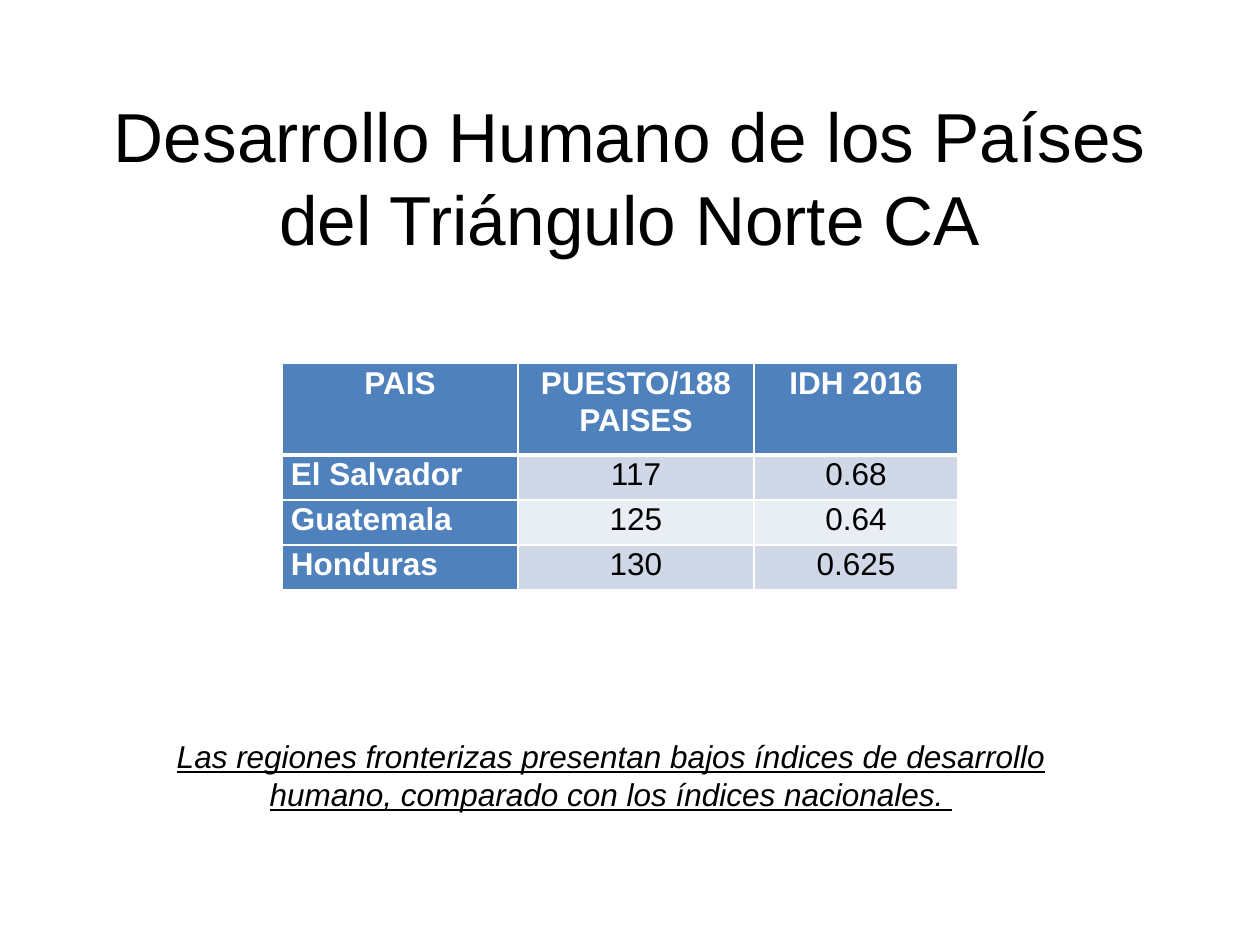
import pptx
import pptx.util
import pptx.dml.color
import pptx.enum.text
import pptx.oxml
import pptx.oxml.ns

TITLE = "Desarrollo Humano de los Países del Triángulo Norte CA"
NOTE = ("Las regiones fronterizas presentan bajos índices de desarrollo humano, "
        "comparado con los índices nacionales. ")
ROWS = [
    ("PAIS", "PUESTO/188 PAISES", "IDH 2016"),
    ("El Salvador", "117", "0.68"),
    ("Guatemala", "125", "0.64"),
    ("Honduras", "130", "0.625"),
]
COLUMN_WIDTHS = (236, 236, 204)
ROW_HEIGHTS = (92, 45, 45, 45)
BLACK, WHITE, BLUE = "000000", "FFFFFF", "4F81BD"
BANDS = ("E9EDF4", "D0D8E8")
ALIGN = pptx.enum.text.PP_ALIGN


def px(count):
    return pptx.util.Emu(round(count * 914400 / 126))


def rgb(value):
    return pptx.dml.color.RGBColor.from_string(value)


def write(frame, text, size, color=BLACK, bold=False, align=ALIGN.CENTER):
    frame.word_wrap = True
    paragraph = frame.paragraphs[0]
    paragraph.text = text
    paragraph.alignment = align
    paragraph.font.name = "Arial"
    paragraph.font.size = pptx.util.Pt(size)
    paragraph.font.bold = bold
    paragraph.font.color.rgb = rgb(color)
    return paragraph


def add_text(slide, box, text, size):
    frame = slide.shapes.add_textbox(*map(px, box)).text_frame
    return frame, write(frame, text, size)


def set_borders(cell, bottom):
    properties = cell._tc.get_or_add_tcPr()
    sides = (("lnL", 1), ("lnR", 1), ("lnT", 1), ("lnB", bottom))
    for index, (side, points) in enumerate(sides):
        properties.insert(index, pptx.oxml.parse_xml(
            f'<a:{side} {pptx.oxml.ns.nsdecls("a")} w="{pptx.util.Pt(points)}">'
            f'<a:solidFill><a:srgbClr val="{WHITE}"/></a:solidFill></a:{side}>'))


def fill_cell(cell, text, row, column):
    heading = row == 0 or column == 0
    cell.margin_left = cell.margin_right = px(9)
    cell.margin_top = cell.margin_bottom = 0
    cell.fill.solid()
    cell.fill.fore_color.rgb = rgb(BLUE if heading else BANDS[row % 2])
    paragraph = write(cell.text_frame, text, 18, WHITE if heading else BLACK, heading,
                      ALIGN.JUSTIFY if row and column == 0 else ALIGN.CENTER)
    paragraph.line_spacing = 1.07
    paragraph.space_after = pptx.util.Pt(8)
    set_borders(cell, 1 if row else 3)


def main():
    deck = pptx.Presentation()
    deck.slide_width, deck.slide_height = px(1260), px(945)
    slide = deck.slides.add_slide(deck.slide_layouts[6])

    title_frame, _ = add_text(slide, (63, 97, 1134, 158), TITLE, 39.6)
    title_frame.vertical_anchor = pptx.enum.text.MSO_ANCHOR.MIDDLE

    ranking = slide.shapes.add_table(
        len(ROWS), len(COLUMN_WIDTHS), px(282), px(363),
        px(sum(COLUMN_WIDTHS)), px(sum(ROW_HEIGHTS))).table
    for column, width in zip(ranking.columns, COLUMN_WIDTHS):
        column.width = px(width)
    for row, height in zip(ranking.rows, ROW_HEIGHTS):
        row.height = px(height)
    for row, values in enumerate(ROWS):
        for column, text in enumerate(values):
            fill_cell(ranking.cell(row, column), text, row, column)

    note_frame, note = add_text(slide, (115, 731, 992, 89), NOTE, 18)
    note_frame.auto_size = pptx.enum.text.MSO_AUTO_SIZE.SHAPE_TO_FIT_TEXT
    note.font.italic = True
    note.font.underline = True

    deck.save("out.pptx")


if __name__ == "__main__":
    main()
